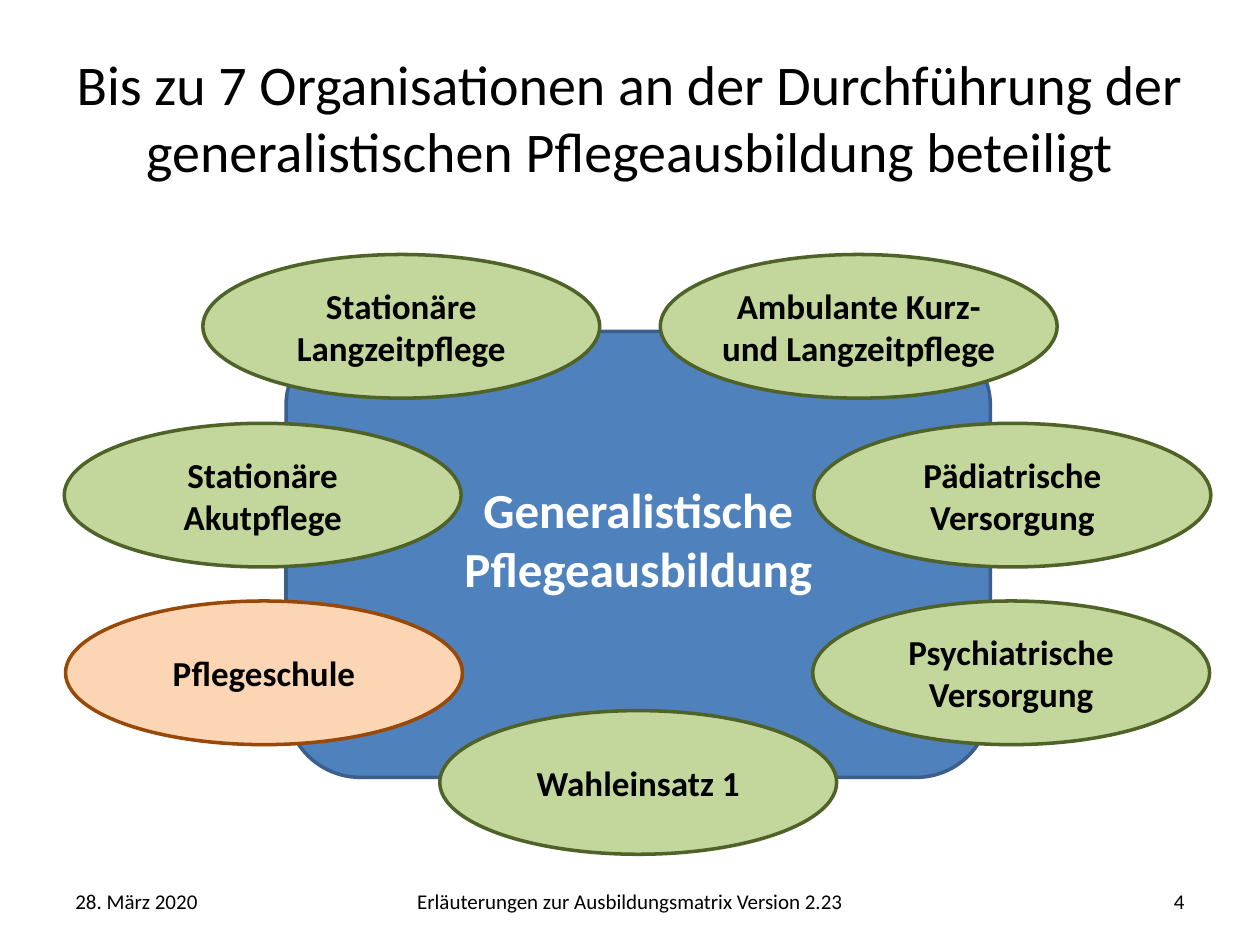
"""Build a slide showing the seven organisations involved in generalist nursing training."""
import dataclasses

import pptx
import pptx.dml.color
import pptx.enum.shapes
import pptx.enum.text
import pptx.util

Inches = pptx.util.Inches
Pt = pptx.util.Pt
SHAPE = pptx.enum.shapes.MSO_SHAPE
ALIGN = pptx.enum.text.PP_ALIGN
ANCHOR = pptx.enum.text.MSO_ANCHOR


@dataclasses.dataclass(frozen=True)
class Theme:
    font: str = "Calibri"
    text: str = "000000"
    inverse: str = "FFFFFF"
    core: tuple = ("4F81BD", "3A5F8C")
    practice: tuple = ("C3D69B", "4F6228")
    school: tuple = ("FCD5B5", "984807")
    title_size: int = 32
    core_size: int = 28
    label_size: int = 20
    footer_size: int = 12
    line_width: int = 2


class SlideBuilder:
    def __init__(self, slide, theme):
        self.slide = slide
        self.theme = theme

    def color(self, value):
        return pptx.dml.color.RGBColor.from_string(value)

    def set_text(self, sp, text, size, color, align=ALIGN.CENTER, bold=False, wrap=True):
        tf = sp.text_frame
        tf.word_wrap = wrap
        tf.vertical_anchor = ANCHOR.MIDDLE
        p = tf.paragraphs[0]
        p.text = text
        p.alignment = align
        for r in p.runs:
            r.font.name = self.theme.font
            r.font.size = Pt(size)
            r.font.bold = bold
            r.font.color.rgb = self.color(color)

    def text(self, box, text, size, align=ALIGN.CENTER):
        sp = self.slide.shapes.add_textbox(*map(Inches, box))
        self.set_text(sp, text, size, self.theme.text, align)

    def shape(self, kind, box, colors):
        sp = self.slide.shapes.add_shape(kind, *map(Inches, box))
        fill, line = colors
        sp.shadow.inherit = False
        sp.fill.solid()
        sp.fill.fore_color.rgb = self.color(fill)
        sp.line.color.rgb = self.color(line)
        sp.line.width = Pt(self.theme.line_width)
        return sp

    def core(self, box, text):
        sp = self.shape(SHAPE.ROUNDED_RECTANGLE, box, self.theme.core)
        self.set_text(sp, text, self.theme.core_size, self.theme.inverse, bold=True)
        sp.text_frame.margin_bottom = Inches(0.3)

    def organisation(self, left, top, text, colors):
        sp = self.shape(SHAPE.OVAL, (left, top, 3.15, 1.14), colors)
        self.set_text(sp, text, self.theme.label_size, self.theme.text, bold=True, wrap=False)


def main():
    prs = pptx.Presentation()
    prs.slide_width, prs.slide_height = Inches(10), Inches(7.5)
    theme = Theme()
    s = SlideBuilder(prs.slides.add_slide(prs.slide_layouts[6]), theme)

    s.text((0.5, 0.3, 9, 1.25),
           "Bis zu 7 Organisationen an der Durchführung der "
           "generalistischen Pflegeausbildung beteiligt", theme.title_size)
    footers = [
        (0.5, 2.33, "28. März 2020", ALIGN.LEFT),
        (2.56, 4.88, "Erläuterungen zur Ausbildungsmatrix Version 2.23", ALIGN.CENTER),
        (7.17, 2.33, "4", ALIGN.RIGHT),
    ]
    for left, width, text, align in footers:
        s.text((left, 6.95, width, 0.4), text, theme.footer_size, align)

    s.core((2.27, 2.63, 5.59, 3.54), "Generalistische Pflegeausbildung")
    organisations = [
        (1.61, 2.02, "Stationäre\nLangzeitpflege", theme.practice),
        (0.51, 3.36, "Stationäre\nAkutpflege", theme.practice),
        (6.46, 3.36, "Pädiatrische\nVersorgung", theme.practice),
        (3.49, 5.64, "Wahleinsatz 1", theme.practice),
        (6.45, 4.77, "Psychiatrische\nVersorgung", theme.practice),
        (0.52, 4.77, "Pflegeschule", theme.school),
        (5.24, 2.02, "Ambulante Kurz-\nund Langzeitpflege", theme.practice),
    ]
    for organisation in organisations:
        s.organisation(*organisation)

    prs.save("out.pptx")


if __name__ == "__main__":
    main()
